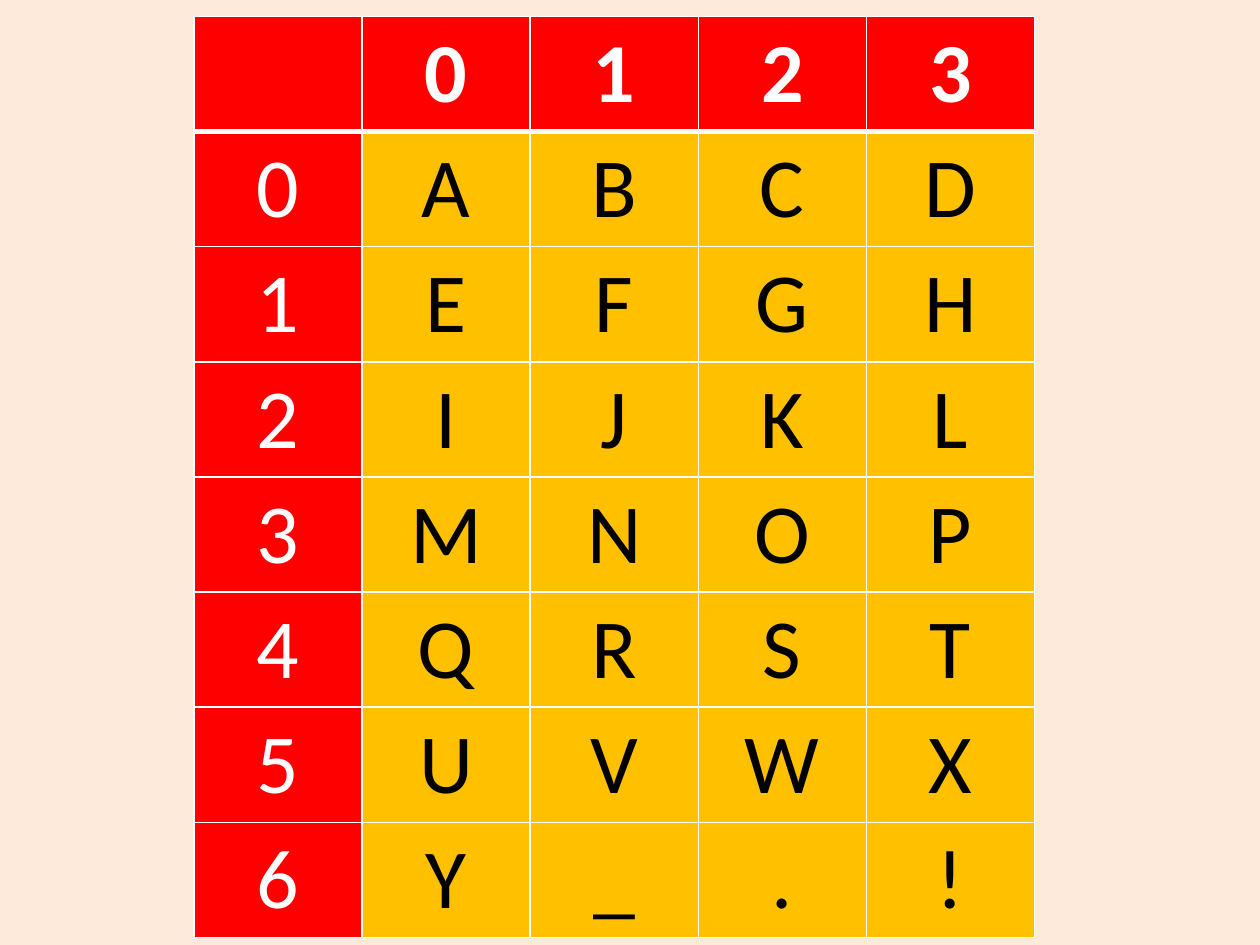
from pptx import Presentation
from pptx.dml.color import RGBColor
from pptx.enum.text import PP_ALIGN
from pptx.oxml.ns import qn
from pptx.util import Inches, Pt
from lxml import etree

CENTER = PP_ALIGN.CENTER
WHITE, BLACK, RED, GOLD = "FFFFFF", "000000", "FF0000", "FFC000"
LETTERS = "ABCDEFGHIJKLMNOPQRSTUVWXY_.!"
COLS = 4


def color(code):
    return RGBColor.from_string(code)


class Deck:
    font = "Calibri"
    size = 48

    def __init__(self, wide, high, back):
        self.prs = Presentation()
        self.prs.slide_width = Inches(wide)
        self.prs.slide_height = Inches(high)
        self.slide = self.prs.slides.add_slide(self.prs.slide_layouts[6])
        fill = self.slide.background.fill
        fill.solid()
        fill.fore_color.rgb = color(back)

    def border(self, cell, side, width):
        props = cell._tc.get_or_add_tcPr()
        line = etree.SubElement(props, qn(f"a:ln{side}"), w=str(Pt(width)))
        paint = etree.SubElement(line, qn("a:solidFill"))
        etree.SubElement(paint, qn("a:srgbClr"), val=WHITE)

    def cell(self, cell, text, fill, ink, bold, top, base):
        for side, width in zip("LRTB", (1, 1, top, base)):
            self.border(cell, side, width)
        cell.fill.solid()
        cell.fill.fore_color.rgb = color(fill)
        para = cell.text_frame.paragraphs[0]
        para.alignment = CENTER
        if text:
            run = para.add_run()
            run.text = text
            run.font.name = self.font
            run.font.size = Pt(self.size)
            run.font.bold = bold
            run.font.color.rgb = color(ink)

    def table(self, data, left, top, width, height):
        shape = self.slide.shapes.add_table(
            len(data), len(data[0]),
            Inches(left), Inches(top), Inches(width), Inches(height))
        grid = shape.table
        for r, row in enumerate(data):
            for c, text in enumerate(row):
                label = r == 0 or c == 0
                self.cell(grid.cell(r, c), text,
                          RED if label else GOLD,
                          WHITE if label else BLACK,
                          bold=r == 0,
                          top=3 if r == 1 else 1,
                          base=3 if r == 0 else 1)

    def save(self):
        self.prs.save("out.pptx")


def main():
    head = ["", *map(str, range(COLS))]
    body = [[str(n), *LETTERS[n * COLS:(n + 1) * COLS]]
            for n in range(len(LETTERS) // COLS)]
    deck = Deck(10, 7.5, "FDEADA")
    deck.table([head, *body], 1.54, 0.13, 6.67, 7.2)
    deck.save()


if __name__ == "__main__":
    main()
